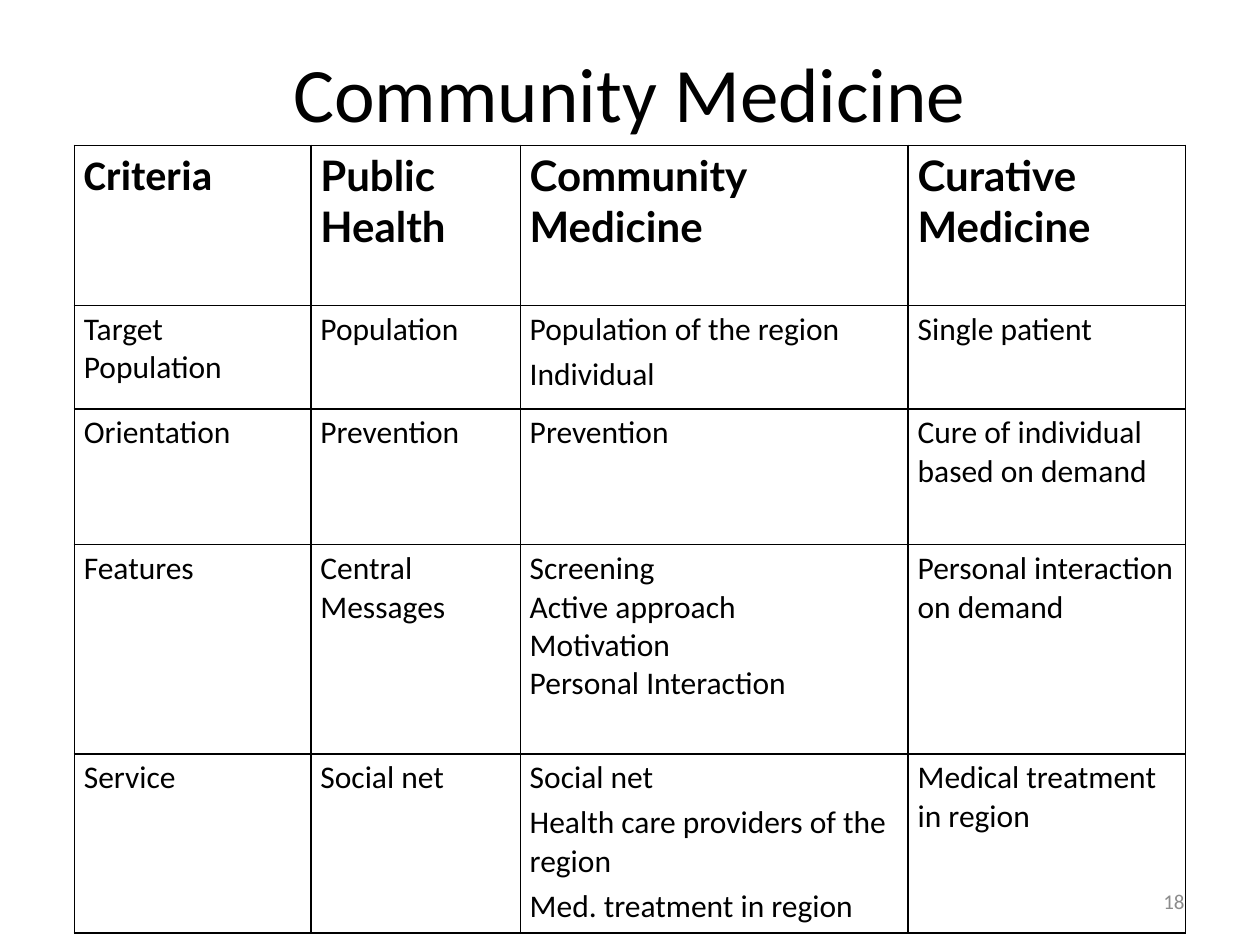
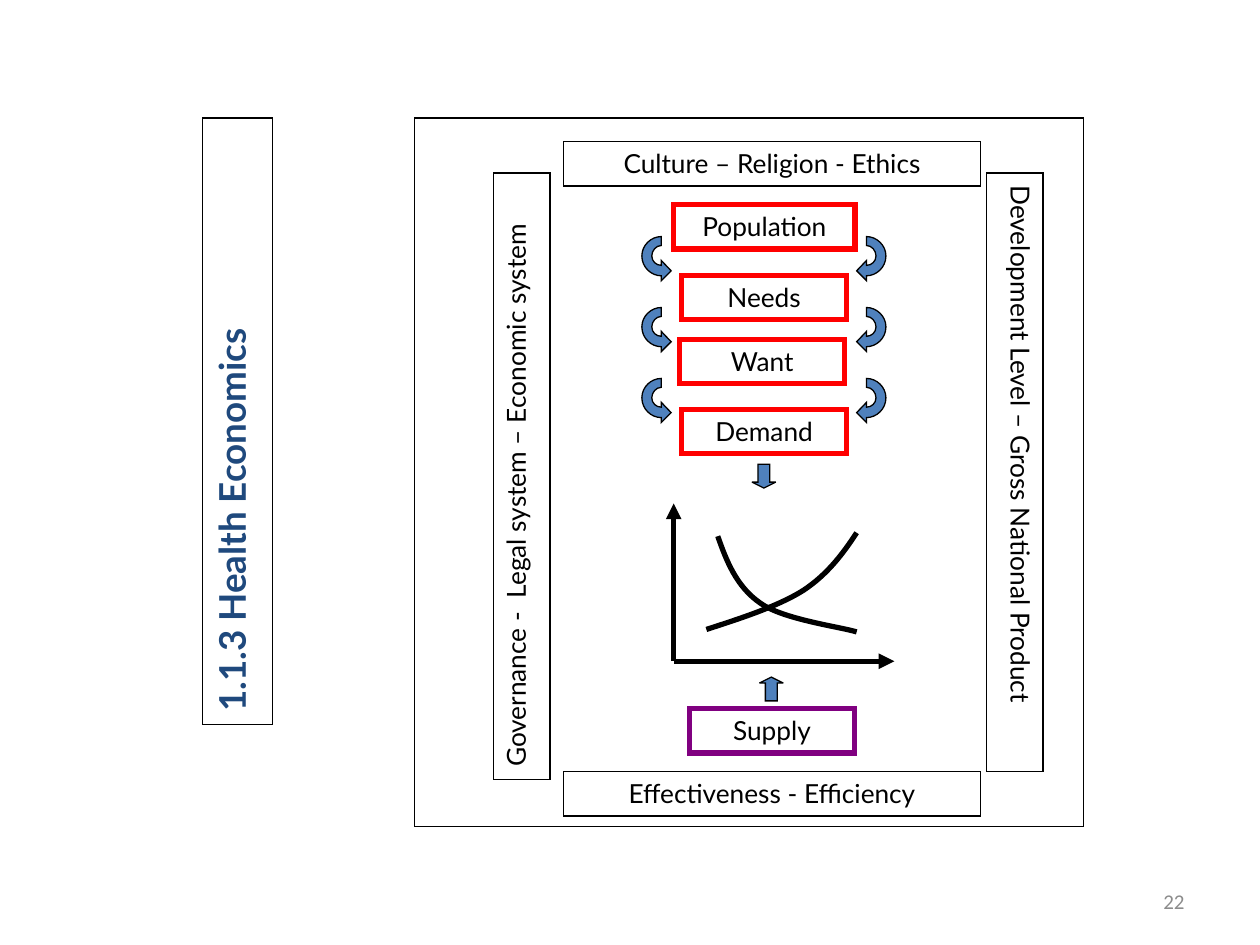
from lxml import etree
from pptx import Presentation
from pptx.dml.color import RGBColor
from pptx.enum.shapes import MSO_CONNECTOR, MSO_SHAPE
from pptx.enum.text import MSO_ANCHOR, PP_ALIGN
from pptx.oxml.ns import qn
from pptx.util import Cm, Pt

RECT, UP, DOWN = MSO_SHAPE.RECTANGLE, MSO_SHAPE.UP_ARROW, MSO_SHAPE.DOWN_ARROW
STRAIGHT = MSO_CONNECTOR.STRAIGHT
LEFT, CENTER, RIGHT = PP_ALIGN.LEFT, PP_ALIGN.CENTER, PP_ALIGN.RIGHT
TOP, MIDDLE = MSO_ANCHOR.TOP, MSO_ANCHOR.MIDDLE

BLACK = RGBColor(0x00, 0x00, 0x00)
WHITE = RGBColor(0xFF, 0xFF, 0xFF)
GRAY = RGBColor(0x8C, 0x8C, 0x8C)
RED = RGBColor(0xFF, 0x00, 0x00)
PURPLE = RGBColor(0x80, 0x00, 0x80)
BLUE = RGBColor(0x4F, 0x81, 0xBD)
NAVY = RGBColor(0x1F, 0x49, 0x7D)

BODY_FONT, ACCENT_FONT = "Calibri", "Lato"
THIN, THICK = 0.75, 3
BOX_H = 0.9

COL_WIDTHS = [4.77, 4.22, 7.82, 5.59]
ROW_HEIGHTS = [3.23, 2.08, 2.74, 4.22, 3.61]
CRITERIA = [
    ["Criteria", "Public Health", "Community Medicine", "Curative Medicine"],
    ["Target Population", "Population", ["Population of the region", "Individual"],
     "Single patient"],
    ["Orientation", "Prevention", "Prevention", "Cure of individual based on demand"],
    ["Features", "Central Messages",
     "Screening\nActive approach\nMotivation\nPersonal Interaction",
     "Personal interaction on demand"],
    ["Service", "Social net",
     ["Social net", "Health care providers of the region", "Med. treatment in region"],
     "Medical treatment in region"],
]

DEMAND_CURVE = [(6.12, 8.43), (6.3, 8.94), (6.5, 9.45), (6.98, 9.78),
                (7.44, 10.11), (8.61, 10.26), (8.92, 10.36)]
SUPPLY_CURVE = [(5.89, 10.31), (6.6, 10.08), (7.34, 9.84), (7.85, 9.52),
                (8.33, 9.2), (8.64, 8.79), (8.92, 8.36)]
CURVE_STARTS = (0, 3)
TURN = [(0, 0), (0.2, 0), (0.39, 0.17), (0.39, 0.39), (0.39, 0.62), (0.2, 0.79),
        (0, 0.79), (0, 0.89), (-0.2, 0.69), (0, 0.48), (0, 0.58), (0.1, 0.58),
        (0.19, 0.5), (0.19, 0.39), (0.19, 0.28), (0.1, 0.18), (0, 0.18)]
TURN_STARTS = (0, 3, 10, 13)


def write(tf, paragraphs, size, font=BODY_FONT, color=BLACK, bold=False,
          align=LEFT, anchor=TOP, gap=0):
    """Fill a text frame; a newline inside a paragraph is a line break."""
    tf.word_wrap = True
    tf.vertical_anchor = anchor
    for i, text in enumerate(paragraphs):
        p = tf.add_paragraph() if i else tf.paragraphs[0]
        p.alignment = align
        if i:
            p.space_before = Pt(gap)
        for j, line in enumerate(text.split("\n")):
            if j:
                p.add_line_break()
            r = p.add_run()
            r.text = line
            r.font.size, r.font.name, r.font.bold = Pt(size), font, bold
            r.font.color.rgb = color


def add_text(slide, x, y, w, h, text, size, **style):
    """Add a plain text box."""
    tb = slide.shapes.add_textbox(Cm(x), Cm(y), Cm(w), Cm(h))
    write(tb.text_frame, [text], size, **style)


def add_number(slide, number):
    """Add the grey slide number at the lower right."""
    add_text(slide, 18.21, 17.65, 5.92, 1.02, number, 12,
             color=GRAY, align=RIGHT, anchor=MIDDLE)


def paint(sp, line, width, fill=None):
    """Set a sharp-cornered outline and a fill, and drop the shadow."""
    sp.shadow.inherit = False
    sp.line.color.rgb, sp.line.width = line, Pt(width)
    etree.SubElement(sp.line._get_or_add_ln(), qn("a:miter"), lim="800000")
    if fill is None:
        sp.fill.background()
    else:
        sp.fill.solid()
        sp.fill.fore_color.rgb = fill


def add_box(slide, x, y, w, h, text="", line=BLACK, width=THIN, fill=None,
            vert=None, size=15, **style):
    """Add an outlined rectangle, with optional vertical text."""
    sp = slide.shapes.add_shape(RECT, Cm(x), Cm(y), Cm(w), Cm(h))
    paint(sp, line, width, fill)
    if text:
        write(sp.text_frame, [text], size, font=ACCENT_FONT,
              align=LEFT if vert else CENTER, **style)
    if vert:
        sp.element.txBody.bodyPr.set("vert", vert)


def add_outline(slide, x, y, points, starts, width, fill=None, mirror=1):
    """Draw points relative to x, y, with a cubic curve at each start."""
    pts = [(Cm(x + mirror * px), Cm(y + py)) for px, py in points]
    fb = slide.shapes.build_freeform(*pts[0])
    fb.add_line_segments(pts[1:], close=fill is not None)
    sp = fb.convert_to_shape()
    paint(sp, BLACK, width, fill)
    segments = list(sp.element.iter(qn("a:lnTo")))
    for start in starts:
        curve = etree.Element(qn("a:cubicBezTo"))
        segments[start].addprevious(curve)
        for segment in segments[start:start + 3]:
            curve.append(segment[0])
            segment.getparent().remove(segment)


def add_axis(slide, x1, y1, x2, y2):
    """Add a thick line with an arrowhead at its end."""
    cn = slide.shapes.add_connector(STRAIGHT, Cm(x1), Cm(y1), Cm(x2), Cm(y2))
    cn.line.color.rgb, cn.line.width = BLACK, Pt(THICK)
    etree.SubElement(cn.line._get_or_add_ln(), qn("a:tailEnd"), type="triangle")
    etree.SubElement(cn.element.spPr, qn("a:effectLst"))


def set_borders(cell):
    """Give a cell black one-point borders."""
    tcPr = cell._tc.get_or_add_tcPr()
    for i, side in enumerate(("lnL", "lnR", "lnT", "lnB")):
        ln = etree.Element(qn(f"a:{side}"), w=str(Pt(1)))
        fill = etree.SubElement(ln, qn("a:solidFill"))
        etree.SubElement(fill, qn("a:srgbClr"), val=str(BLACK))
        tcPr.insert(i, ln)


def add_criteria_table(slide, x, y):
    """Compare the three kinds of medicine in a bordered grid."""
    frame = slide.shapes.add_table(len(ROW_HEIGHTS), len(COL_WIDTHS), Cm(x), Cm(y),
                                   Cm(sum(COL_WIDTHS)), Cm(sum(ROW_HEIGHTS)))
    table = frame.table
    table.first_row = table.horz_banding = False
    for col, w in zip(table.columns, COL_WIDTHS):
        col.width = Cm(w)
    for i, (row, h) in enumerate(zip(table.rows, ROW_HEIGHTS)):
        row.height = Cm(h)
        for j, cell in enumerate(row.cells):
            cell.margin_left = cell.margin_right = Cm(0.19)
            cell.margin_top = cell.margin_bottom = Cm(0.1)
            cell.fill.background()
            set_borders(cell)
            text = CRITERIA[i][j]
            write(cell.text_frame, [text] if isinstance(text, str) else text,
                  18 if i else 24, bold=i == 0, gap=3.7,
                  font=ACCENT_FONT if i == 0 and j else BODY_FONT)


def add_market(slide, x, y):
    """Draw the supply and demand curves on their axes."""
    add_axis(slide, x + 5.23, y + 10.95, x + 9.68, y + 10.95)
    add_axis(slide, x + 5.23, y + 10.95, x + 5.23, y + 7.77)
    for curve in (DEMAND_CURVE, SUPPLY_CURVE):
        add_outline(slide, x, y, curve, CURVE_STARTS, THICK)


def add_arrows(slide, x, y):
    """Add the turning arrows between steps and the two block arrows."""
    for dx, mirror in ((9.12, 1), (4.98, -1)):
        for i in range(3):
            add_outline(slide, x + dx, y + 2.39 + 1.43 * i, TURN, TURN_STARTS,
                        THIN, BLUE, mirror)
    for kind, dx, dy in ((DOWN, 6.81, 6.98), (UP, 6.96, 11.27)):
        sp = slide.shapes.add_shape(kind, Cm(x + dx), Cm(y + dy), Cm(0.48), Cm(0.48))
        sp.adjustments[0], sp.adjustments[1] = 0.5, 0.25
        paint(sp, BLACK, THIN, BLUE)


def add_economy_diagram(slide, x, y):
    """Build the framed path from population to supply."""
    add_box(slide, x, y, 13.5, 14.28, fill=WHITE)
    for text, dx, dy, w, color in (("Population", 5.23, 1.74, 3.66, RED),
                                   ("Needs", 5.39, 3.17, 3.33, RED),
                                   ("Want", 5.35, 4.46, 3.33, RED),
                                   ("Demand", 5.39, 5.87, 3.33, RED),
                                   ("Supply", 5.55, 11.9, 3.33, PURPLE)):
        add_box(slide, x + dx, y + dy, w, BOX_H, text, line=color, width=THICK)
    add_market(slide, x, y)
    add_arrows(slide, x, y)
    for text, dy in (("Culture – Religion - Ethics", 0.47),
                     ("Effectiveness - Efficiency", 13.17)):
        add_box(slide, x + 3.01, y + dy, 8.41, BOX_H, text)
    add_box(slide, x + 11.54, y + 1.11, 1.14, 12.07,
            "Development Level – Gross National Product", vert="vert")
    add_box(slide, x + 1.6, y + 1.11, 1.14, 12.22,
            "Governance -  Legal system – Economic system", vert="vert270")


def build_comparison(prs):
    """Build the table slide."""
    slide = prs.slides.add_slide(prs.slide_layouts[6])
    add_criteria_table(slide, 1.5, 2.93)
    add_text(slide, 1.27, 0.79, 22.86, 3.18, "Community Medicine", 44, align=CENTER)
    add_number(slide, "18")


def build_economics(prs):
    """Build the diagram slide."""
    slide = prs.slides.add_slide(prs.slide_layouts[6])
    add_economy_diagram(slide, 8.35, 2.38)
    add_box(slide, 4.09, 2.38, 1.41, 12.22, "1.1.3 Health Economics",
            vert="vert270", size=21, color=NAVY, bold=True)
    add_number(slide, "22")


def main():
    """Build and save the presentation."""
    prs = Presentation()
    prs.slide_width, prs.slide_height = Cm(25.4), Cm(19.05)
    build_comparison(prs)
    build_economics(prs)
    prs.save("out.pptx")


if __name__ == "__main__":
    main()
